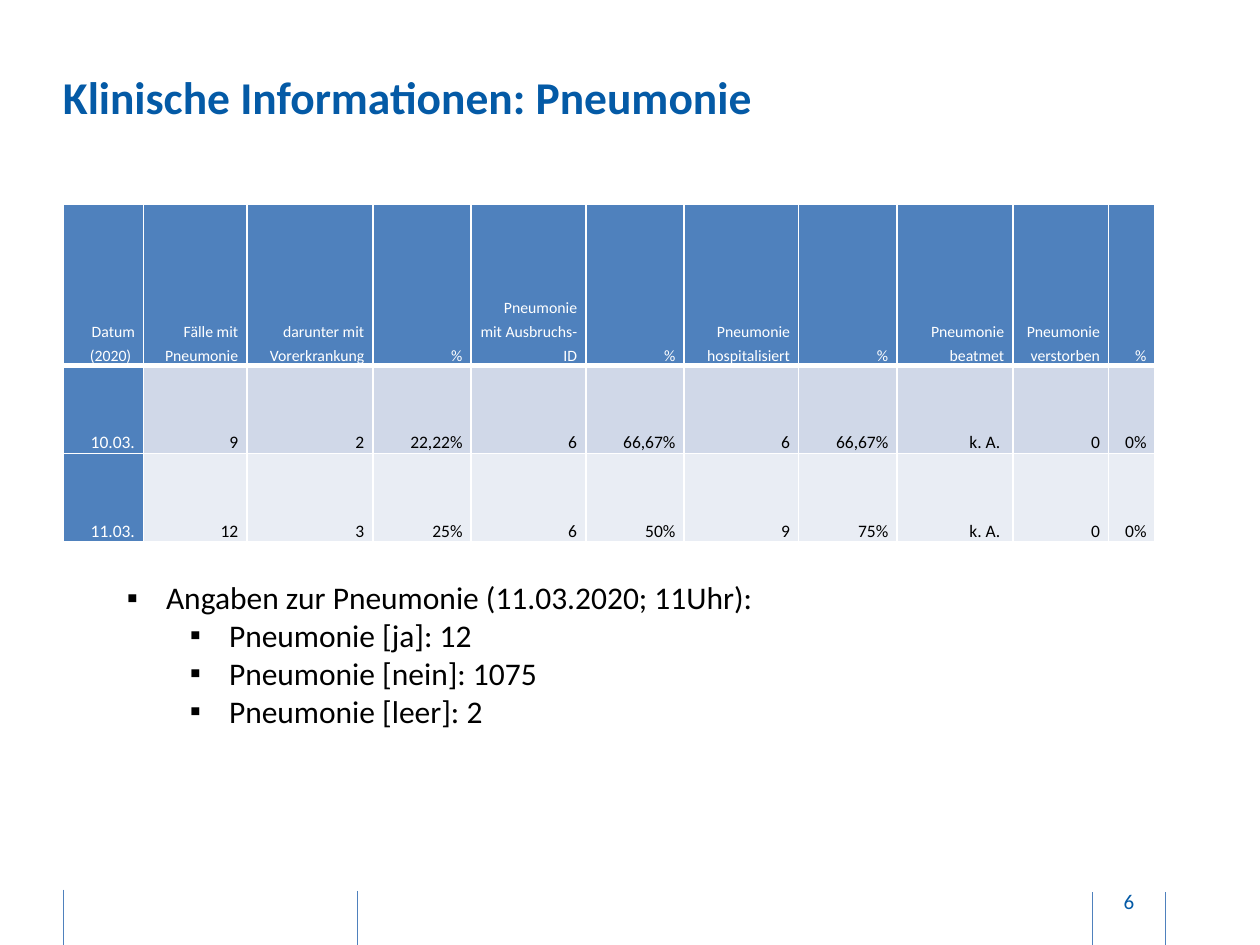
from dataclasses import dataclass

from lxml import etree
from pptx import Presentation
from pptx.dml.color import RGBColor
from pptx.enum.shapes import MSO_CONNECTOR
from pptx.enum.text import MSO_ANCHOR, MSO_AUTO_SIZE, PP_ALIGN
from pptx.oxml.ns import qn
from pptx.util import Inches, Pt

STRAIGHT = MSO_CONNECTOR.STRAIGHT
TOP, MIDDLE, BOTTOM = MSO_ANCHOR.TOP, MSO_ANCHOR.MIDDLE, MSO_ANCHOR.BOTTOM
LEFT, CENTER, RIGHT = PP_ALIGN.LEFT, PP_ALIGN.CENTER, PP_ALIGN.RIGHT
FIT_SHAPE = MSO_AUTO_SIZE.SHAPE_TO_FIT_TEXT


@dataclass(frozen=True)
class Theme:
    font: str = "Calibri"
    heading: str = "045AA6"
    accent: str = "4F81BD"
    white: str = "FFFFFF"
    black: str = "000000"
    bands: tuple[str, ...] = ("D0D8E8", "E9EDF4")
    title_size: float = 26
    body_size: float = 18
    number_size: float = 12
    cell_size: float = 10
    header_size: float = 9


@dataclass(frozen=True)
class Area:
    left: float
    top: float
    width: float
    height: float

    def lengths(self) -> tuple:
        return tuple(Inches(n) for n in (self.left, self.top, self.width, self.height))


@dataclass(frozen=True)
class Rule:
    x: float
    top: float


@dataclass(frozen=True)
class Bullet:
    text: str
    level: int


THEME = Theme()
SLIDE_HEIGHT = 7.5
FOOTER_RULES = [Rule(0.5, 7.06), Rule(2.84, 7.07), Rule(8.67, 7.08), Rule(9.25, 7.08)]
COLUMN_WIDTHS = [0.64, 0.82, 1, 0.78, 0.91, 0.78, 0.91, 0.78, 0.92, 0.76, 0.37]
ROW_HEIGHTS = [1.28, 0.7, 0.7]
TABLE_ROWS = [
    ["Datum (2020) ", "Fälle mit Pneumonie", "darunter mit Vorerkrankung", "%",
     "Pneumonie mit Ausbruchs-ID", "%", "Pneumonie hospitalisiert", "%",
     "Pneumonie beatmet", "Pneumonie verstorben", "%"],
    ["10.03.", "9", "2", "22,22%", "6", "66,67%", "6", "66,67%", "k. A. ", "0", "0%"],
    ["11.03.", "12", "3", "25%", "6", "50%", "9", "75%", "k. A. ", "0", "0%"],
]
BULLETS = [
    Bullet("Angaben zur Pneumonie (11.03.2020; 11Uhr):", 0),
    Bullet("Pneumonie [ja]: 12", 1),
    Bullet("Pneumonie [nein]: 1075", 1),
    Bullet("Pneumonie [leer]: 2", 1),
]


def style_runs(para, size: float, color: str, bold: bool = False) -> None:
    for run in para.runs:
        run.font.name = THEME.font
        run.font.size = Pt(size)
        run.font.bold = bold
        run.font.color.rgb = RGBColor.from_string(color)


def add_rule(slide, rule: Rule) -> None:
    x = Inches(rule.x)
    line = slide.shapes.add_connector(STRAIGHT, x, Inches(rule.top), x, Inches(SLIDE_HEIGHT))
    line.line.color.rgb = RGBColor.from_string(THEME.accent)
    line.line.width = Pt(0.5)
    etree.SubElement(line._element.spPr, qn("a:effectLst"))


def add_label(slide, area: Area, text: str, size: float, anchor, align,
              margin: float = 0, bold: bool = False) -> None:
    """Add one line of heading-coloured text without side margins."""
    frame = slide.shapes.add_textbox(*area.lengths()).text_frame
    frame.word_wrap = True
    frame.vertical_anchor = anchor
    frame.margin_left = frame.margin_right = 0
    frame.margin_top = frame.margin_bottom = Inches(margin)
    frame.text = text
    para = frame.paragraphs[0]
    para.alignment = align
    style_runs(para, size, THEME.heading, bold)


def set_borders(cell, bottom: float) -> None:
    """Draw white borders, with the bottom width given in points."""
    properties = cell._tc.get_or_add_tcPr()
    widths = {"a:lnL": 1, "a:lnR": 1, "a:lnT": 1, "a:lnB": bottom}
    for position, (tag, width) in enumerate(widths.items()):
        border = etree.Element(qn(tag), w=str(Pt(width)))
        fill = etree.SubElement(border, qn("a:solidFill"))
        etree.SubElement(fill, qn("a:srgbClr"), val=THEME.white)
        properties.insert(position, border)


def fill_cell(cell, text: str, row: int, column: int) -> None:
    is_header = row == 0
    is_label = is_header or column == 0
    cell.vertical_anchor = BOTTOM
    cell.margin_left = cell.margin_right = Inches(0.07)
    cell.margin_top = cell.margin_bottom = 0
    cell.fill.solid()
    background = THEME.accent if is_label else THEME.bands[row - 1]
    cell.fill.fore_color.rgb = RGBColor.from_string(background)
    set_borders(cell, bottom=3 if is_header else 1)
    cell.text_frame.text = text
    para = cell.text_frame.paragraphs[0]
    para.alignment = RIGHT
    para.line_spacing = 1.25
    style_runs(para, THEME.header_size if is_header else THEME.cell_size,
               THEME.white if is_label else THEME.black)


def add_case_table(slide, area: Area) -> None:
    table = slide.shapes.add_table(
        len(TABLE_ROWS), len(COLUMN_WIDTHS), *area.lengths()).table
    table.horz_banding = False
    for column, width in zip(table.columns, COLUMN_WIDTHS):
        column.width = Inches(width)
    for row, height in zip(table.rows, ROW_HEIGHTS):
        row.height = Inches(height)
    for row, texts in enumerate(TABLE_ROWS):
        for column, text in enumerate(texts):
            fill_cell(table.cell(row, column), text, row, column)


def add_bullets(slide, area: Area) -> None:
    frame = slide.shapes.add_textbox(*area.lengths()).text_frame
    frame.word_wrap = True
    frame.auto_size = FIT_SHAPE
    for index, bullet in enumerate(BULLETS):
        para = frame.add_paragraph() if index else frame.paragraphs[0]
        para.text = bullet.text
        para.level = bullet.level
        properties = para._p.get_or_add_pPr()
        properties.set("marL", str(Inches(0.31 + 0.5 * bullet.level)))
        properties.set("indent", str(Inches(-0.31)))
        etree.SubElement(properties, qn("a:buFont"), typeface="Arial")
        etree.SubElement(properties, qn("a:buChar"), char="▪")
        style_runs(para, THEME.body_size, THEME.black)


def main() -> None:
    deck = Presentation()
    deck.slide_width, deck.slide_height = Inches(10), Inches(SLIDE_HEIGHT)
    slide = deck.slides.add_slide(deck.slide_layouts[6])
    for rule in FOOTER_RULES:
        add_rule(slide, rule)
    add_label(slide, Area(0.5, 0.55, 8.73, 0.77), "Klinische Informationen: Pneumonie",
              THEME.title_size, TOP, LEFT, bold=True)
    add_case_table(slide, Area(0.5, 1.62, sum(COLUMN_WIDTHS), sum(ROW_HEIGHTS)))
    add_bullets(slide, Area(0.91, 4.54, 8.27, 1.31))
    add_label(slide, Area(8.69, 6.95, 0.54, 0.4), "6",
              THEME.number_size, MIDDLE, CENTER, margin=0.05)
    deck.save("out.pptx")


if __name__ == "__main__":
    main()
